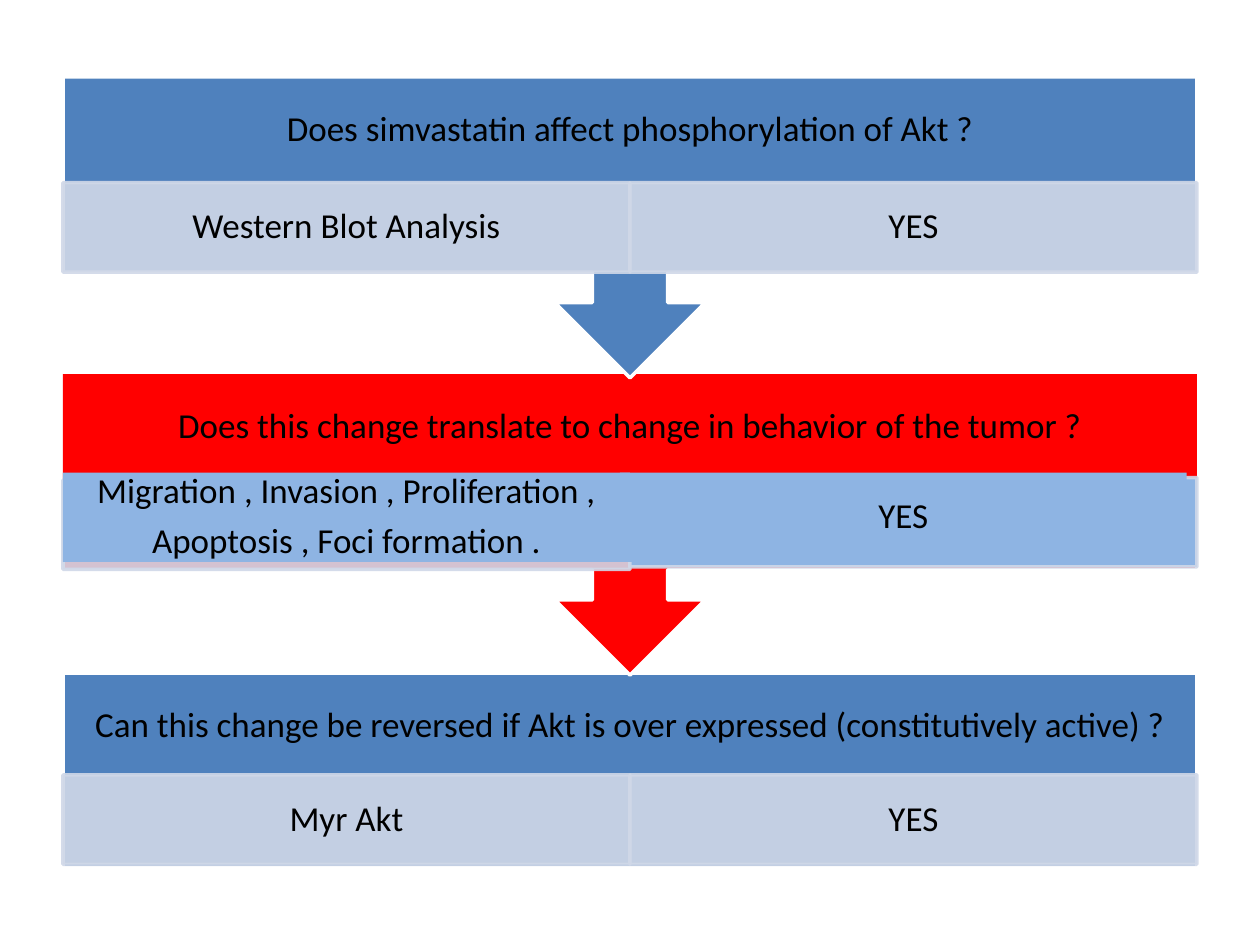
from pptx import Presentation
from pptx.dml.color import RGBColor
from pptx.enum.shapes import MSO_SHAPE
from pptx.enum.text import MSO_ANCHOR, PP_ALIGN
from pptx.oxml.ns import qn
from pptx.util import Pt
from lxml.etree import SubElement

COLORS = {"blue": "4F81BD", "red": "FF0000", "pale": "D0D8E8",
          "sky": "8EB4E3", "white": "FFFFFF", "black": "000000"}
LEFT, WIDTH, HALF = 36, 648, 324
HEADER_H, CELL_H, BLOCK_H, CALLOUT_H = 60.5, 51.1, 111.6, 172


def set_color(fmt, name, opacity=100):
    """Give a fill a solid colour, with opacity in percent."""
    fmt.solid()
    fmt.fore_color.rgb = RGBColor.from_string(COLORS[name])
    if opacity < 100:
        clr = fmt._xPr.find(qn("a:solidFill"))[0]
        SubElement(clr, qn("a:alpha"), val=str(opacity * 1000))


def add_block(s, kind, x, y, w, h, fill, line=None, opacity=100, line_opacity=100):
    """Add a filled shape with an optional 2 pt outline."""
    sp = s.shapes.add_shape(kind, Pt(x), Pt(y), Pt(w), Pt(h))
    sp.shadow.inherit = False
    set_color(sp.fill, fill, opacity)
    if line:
        set_color(sp.line.fill, line, line_opacity)
        sp.line.width = Pt(2)
    else:
        sp.line.fill.background()
    return sp


def set_text(sp, text, margin_y):
    """Write centred 20 pt paragraphs into a shape."""
    tf = sp.text_frame
    tf.word_wrap = True
    tf.vertical_anchor = MSO_ANCHOR.MIDDLE
    tf.margin_left = tf.margin_right = Pt(11.5)
    tf.margin_top = tf.margin_bottom = Pt(margin_y)
    tf.text = text
    for p in tf.paragraphs:
        p.alignment = PP_ALIGN.CENTER
        p.line_spacing = 0.9
        p.space_after = Pt(7)
        for r in p.runs:
            r.font.size = Pt(20)
            r.font.name = "Calibri"
            r.font.color.rgb = RGBColor.from_string(COLORS["black"])


def add_question(s, y, text, color, arrow=True):
    """Add a question bar, with a downward arrow if a step follows."""
    if arrow:
        sp = add_block(s, MSO_SHAPE.UP_ARROW_CALLOUT, LEFT, y, WIDTH, CALLOUT_H, color, "white")
        sp.rotation = 180
    else:
        add_block(s, MSO_SHAPE.RECTANGLE, LEFT, y, WIDTH, BLOCK_H, color, "white")
    box = s.shapes.add_textbox(Pt(LEFT), Pt(y), Pt(WIDTH), Pt(HEADER_H))
    set_text(box, text, 11.5)
    return box


def add_cell(s, x, y, fill="pale", opacity=90):
    """Add one outlined half-width cell."""
    return add_block(s, MSO_SHAPE.RECTANGLE, x, y, HALF, CELL_H, fill, "pale", opacity, 90)


def add_answers(s, y, method, answer):
    """Add the method cell and the answer cell side by side."""
    for i, text in enumerate((method, answer)):
        set_text(add_cell(s, LEFT + i * HALF, y), text, 2)


def add_highlighted_answers(s, y, method, answer):
    """Add the two highlighted cells, each with a label panel laid over it."""
    cells = ((LEFT, 4.3, "pale", 90, LEFT, method),
             (LEFT + HALF, 2.9, "sky", 100, 354.2, answer))
    for x, dy, fill, opacity, label_x, text in cells:
        add_cell(s, x, y + dy, fill, opacity)
        label = add_block(s, MSO_SHAPE.RECTANGLE, label_x, y, HALF, CELL_H, "sky")
        set_text(label, text, 2)


def main():
    """Build the slide from the last step up, so that arrows overlap correctly."""
    prs = Presentation()
    prs.slide_width, prs.slide_height = Pt(720), Pt(540)
    s = prs.slides.add_slide(prs.slide_layouts[6])

    add_question(s, 384.5, "Can this change be reversed if Akt is over expressed "
                 "(constitutively active) ?", "blue", arrow=False)
    add_answers(s, 442.8, "Myr Akt", "YES")

    bar = add_question(s, 213.8, "Does this change translate to change in behavior "
                       "of the tumor ?", "red")
    set_color(bar.fill, "red")
    add_highlighted_answers(s, 270, "Migration , Invasion , Proliferation ,\n"
                            "Apoptosis , Foci formation .", "YES")

    add_question(s, 43.9, "Does simvastatin affect phosphorylation of Akt ?", "blue")
    add_answers(s, 104.4, "Western Blot Analysis", "YES")
    prs.save("out.pptx")


if __name__ == "__main__":
    main()
